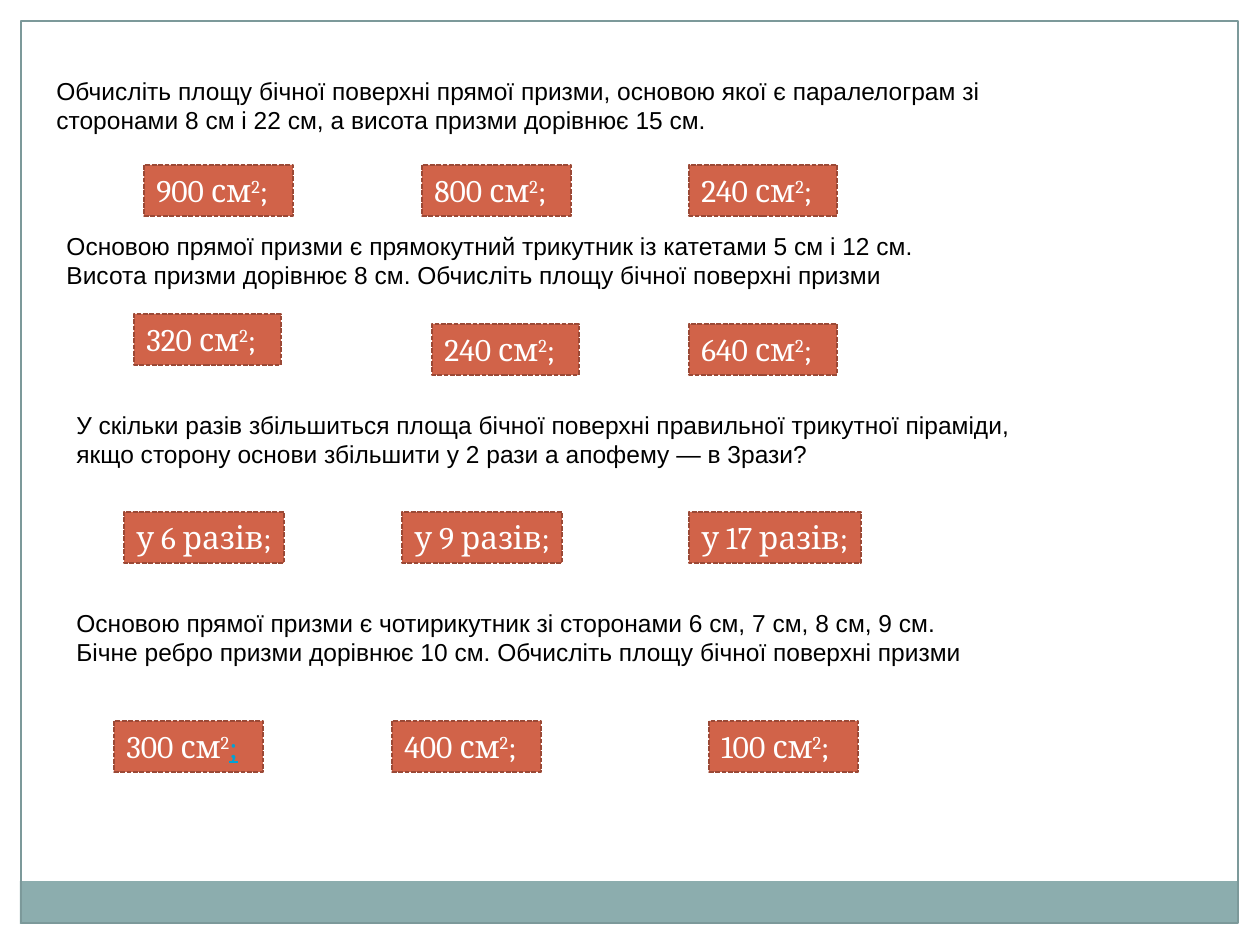
from pptx import Presentation
from pptx import util as u
from pptx.dml.color import RGBColor
from pptx.enum import dml, shapes, text

PX = 914400 / 126
WHITE, BLACK, ACCENT = "FFFFFF", "000000", "00A3D6"
ANSWER_H, QUESTION_H = 51, 72

# Content: question (left, top, width, lines), answers (left, top, width, label)
# A caret marks a superscript digit
TASKS = [
    ((44, 69, 1160, ["Обчисліть площу бічної поверхні прямої призми, основою якої є паралелограм зі",
                     "сторонами 8 см і 22 см, а висота призми дорівнює 15 см."]),
     [(144, 165, 149, "900 см^2;"), (422, 165, 149, "800 см^2;"), (689, 165, 148, "240 см^2;")]),
    ((54, 224, 900, ["Основою прямої призми є прямокутний трикутник із катетами 5 см і 12 см.",
                     "Висота призми дорівнює 8 см. Обчисліть площу бічної поверхні призми"]),
     [(134, 314, 147, "320 см^2;"), (432, 324, 147, "240 см^2;"), (689, 324, 148, "640 см^2;")]),
    ((64, 403, 971, ["У скільки разів збільшиться площа бічної поверхні правильної трикутної піраміди,",
                     "якщо сторону основи збільшити у 2 рази а апофему — в 3рази?"]),
     [(124, 512, 160, "у 6 разів;"), (402, 512, 160, "у 9 разів;"), (689, 512, 172, "у 17 разів;")]),
    ((64, 601, 921, ["Основою прямої призми є чотирикутник зі сторонами 6 см, 7 см, 8 см, 9 см.",
                     "Бічне ребро призми дорівнює 10 см. Обчисліть площу бічної поверхні призми"]),
     [(114, 721, 149, "300 см^2;"), (392, 721, 149, "400 см^2;"), (709, 721, 149, "100 см^2;")]),
]
MARKED = "300 см^2;"  # its semicolon is coloured and underlined

# Frame: box, fill, line
FRAME = [
    ((0, 0, 1260, 21), WHITE, None),
    ((1239, 0, 21, 945), WHITE, None),
    ((0, 0, 21, 945), WHITE, None),
    ((20, 881, 1217, 43), "8CADAE", None),
    ((21, 21, 1217, 902), None, "7C999A"),
]


def rgb(value):
    return RGBColor.from_string(value)


def emu(box):
    return [u.Emu(round(v * PX)) for v in box]


def add_rect(box, fill=None, line=None, width=0.75):
    sp = s.shapes.add_shape(shapes.MSO_SHAPE.RECTANGLE, *emu(box))
    sp.shadow.inherit = False
    if fill:
        sp.fill.solid()
        sp.fill.fore_color.rgb = rgb(fill)
    else:
        sp.fill.background()
    if line:
        sp.line.color.rgb = rgb(line)
        sp.line.width = u.Pt(width)
    else:
        sp.line.fill.background()
    return sp


def set_frame(sp, anchor):
    tf = sp.text_frame
    settings = {"word_wrap": True, "vertical_anchor": anchor, "margin_right": 0}
    for name, value in settings.items():
        setattr(tf, name, value)
    return tf


def add_run(p, words, color, **font):
    r = p.add_run()
    r.text = words
    r.font.color.rgb = rgb(color)
    for name, value in font.items():
        setattr(r.font, name, value)
    return r


def add_question(left, top, width, lines):
    sp = s.shapes.add_textbox(*emu((left, top, width, QUESTION_H)))
    tf = set_frame(sp, text.MSO_ANCHOR.MIDDLE)
    for i, line in enumerate(lines):
        p = tf.add_paragraph() if i else tf.paragraphs[0]
        add_run(p, line, BLACK, name="Arial", size=u.Pt(14))


def add_answer(left, top, width, label):
    sp = add_rect((left, top, width, ANSWER_H), "D16349", "9B4936", 0.9)
    sp.line.dash_style = dml.MSO_LINE.SQUARE_DOT
    p = set_frame(sp, text.MSO_ANCHOR.TOP).paragraphs[0]
    p.alignment = text.PP_ALIGN.LEFT
    font = {"name": "Cambria", "size": u.Pt(18)}
    base, caret, rest = label.partition("^")
    add_run(p, base, WHITE, **font)
    if caret:
        r = add_run(p, rest[0], WHITE, **font)
        r.font._element.set("baseline", "30000")
        marked = label == MARKED
        add_run(p, rest[1:], ACCENT if marked else WHITE, underline=marked or None, **font)


prs = Presentation()
prs.slide_width, prs.slide_height = u.Inches(10), u.Inches(7.5)
s = prs.slides.add_slide(prs.slide_layouts[6])

# Frame and bottom band
for box, fill, line in FRAME:
    add_rect(box, fill, line)

# Questions with their answers
for question, answers in TASKS:
    add_question(*question)
    for answer in answers:
        add_answer(*answer)

prs.save("out.pptx")
